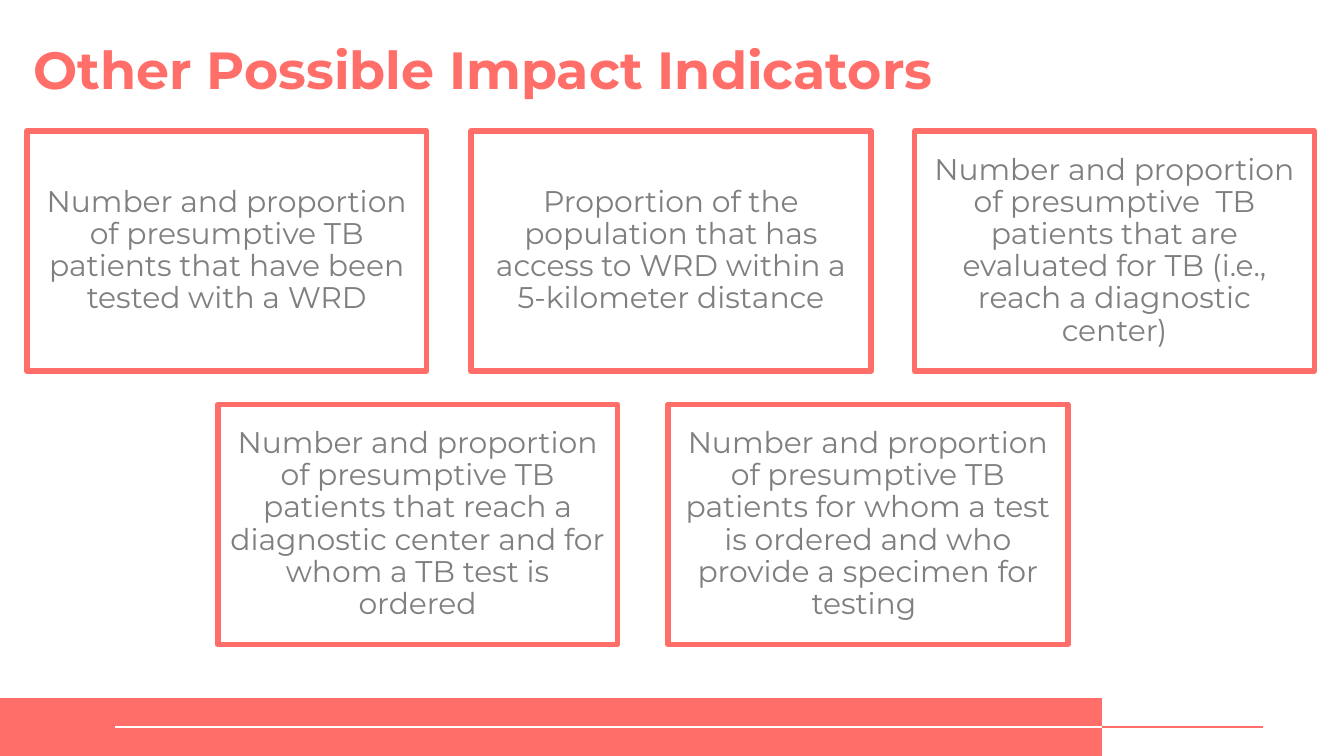
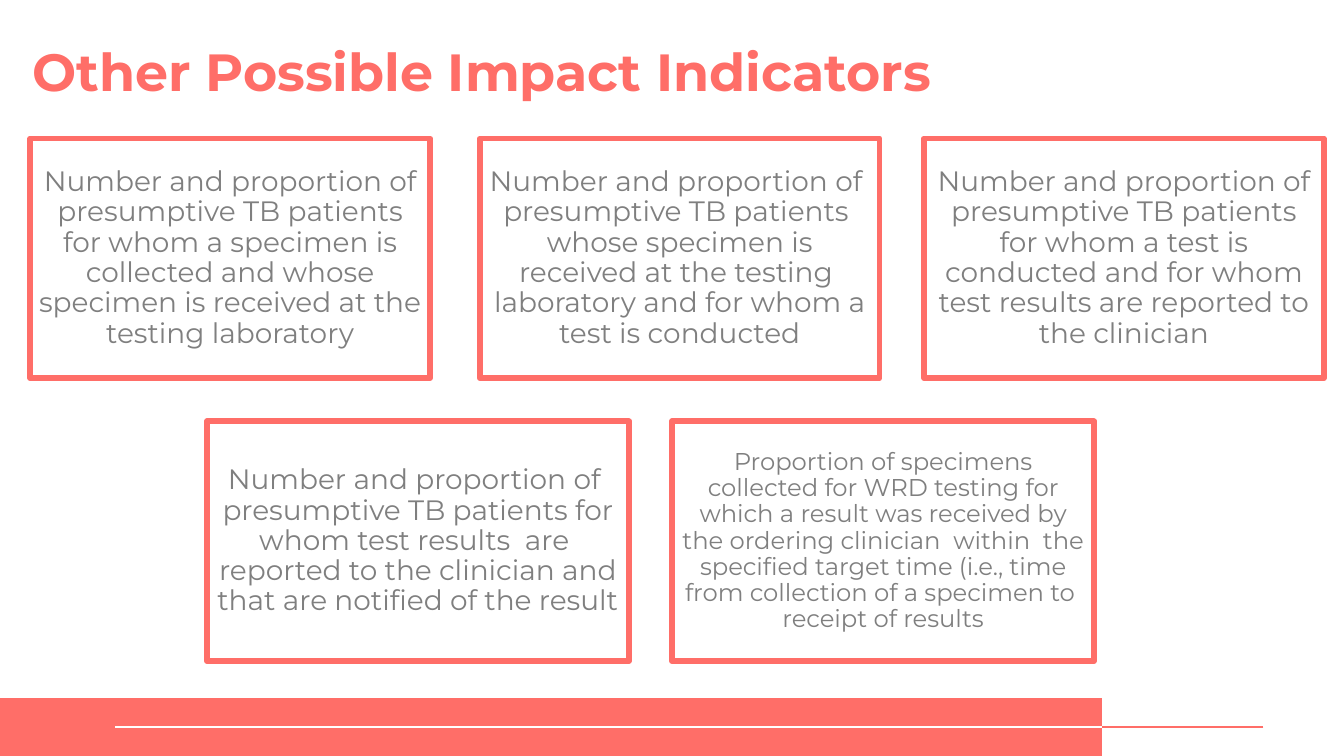
from lxml import etree
from pptx import Presentation
from pptx.dml.color import RGBColor
from pptx.enum.shapes import MSO_CONNECTOR, MSO_SHAPE
from pptx.enum.text import MSO_ANCHOR, MSO_AUTO_SIZE, PP_ALIGN
from pptx.oxml.ns import qn
from pptx.util import Pt

PX = 4572
CORAL = RGBColor(0xFF, 0x6E, 0x68)
GREY = RGBColor(0x7F, 0x7F, 0x7F)
WHITE = RGBColor(0xFF, 0xFF, 0xFF)
FONT = "Montserrat"
TITLE = "Other Possible Impact Indicators"
RECT = MSO_SHAPE.RECTANGLE
STRAIGHT = MSO_CONNECTOR.STRAIGHT
TOP, MIDDLE = MSO_ANCHOR.TOP, MSO_ANCHOR.MIDDLE
LEFT, CENTER = PP_ALIGN.LEFT, PP_ALIGN.CENTER
NO_FIT = MSO_AUTO_SIZE.NONE
TITLE_ONLY = 5
RIGHT_SIDE = 3
BOX_HEIGHT = 357
RULE_Y = 1082

SLIDES = [
    {
        "title_at": (30, 36, 1750, 110),
        "boxes": [
            (40, 195, 595, 16, "Number and proportion of presumptive TB patients that have been tested with a WRD"),
            (701, 195, 595, 16, "Proportion of the population that has access to WRD within a 5-kilometer distance"),
            (1361, 195, 595, 16, "Number and proportion of presumptive  TB patients that are evaluated for TB "
                                 "(i.e., reach a diagnostic center)"),
            (324, 602, 595, 16, "Number and proportion of presumptive TB patients that reach a diagnostic center "
                                "and for whom a TB test is ordered"),
            (994, 602, 595, 16, "Number and proportion of presumptive TB patients for whom a test is ordered "
                                "and who provide a specimen for testing "),
        ],
    },
    {
        "title_at": (28, 38, 1774, 126),
        "boxes": [
            (45, 206, 595, 15, "Number and proportion of presumptive TB patients for whom a specimen is "
                               "collected and whose specimen is received at the testing laboratory"),
            (714, 206, 595, 15, "Number and proportion of  presumptive TB patients  whose specimen is "
                                "received at the testing  laboratory and for whom a test is conducted"),
            (1375, 206, 595, 15, "Number and proportion of presumptive TB patients for whom a test is "
                                 "conducted and for whom test results are reported to the clinician"),
            (308, 627, 628, 15, "Number and proportion of  presumptive TB patients for whom test results  are  "
                                "reported to the clinician and that are notified of the result"),
            (1000, 627, 628, 13, "Proportion of specimens collected for WRD testing for which a result was "
                                 "received by the ordering clinician  within  the  specified target time "
                                 "(i.e., time  from collection of a specimen to  receipt of results"),
        ],
    },
]


def px(*values):
    return [v * PX for v in values]


def apply(obj, formats):
    for name, value in formats.items():
        setattr(obj, name, value)


class Deck:
    def __init__(self):
        self.prs = Presentation()
        self.prs.slide_width, self.prs.slide_height = px(2000, 1125)
        self.s = None

    def add_slide(self):
        self.s = self.prs.slides.add_slide(self.prs.slide_layouts[TITLE_ONLY])
        fill = self.s.background.fill
        fill.solid()
        fill.fore_color.rgb = WHITE

    def text(self, sp, text, size, color, inset, anchor, align, spacing, bold=False):
        tf = sp.text_frame
        margin = inset * PX
        apply(tf, {"word_wrap": True, "auto_size": NO_FIT, "vertical_anchor": anchor,
                   "margin_left": margin, "margin_top": margin,
                   "margin_right": margin, "margin_bottom": margin})
        p = tf.paragraphs[0]
        apply(p, {"alignment": align, "line_spacing": spacing})
        r = p.add_run()
        r.text = text
        apply(r.font, {"name": FONT, "size": Pt(size), "bold": bold})
        r.font.color.rgb = color

    def title(self, text, at):
        sp = self.s.shapes.title
        apply(sp, dict(zip(("left", "top", "width", "height"), px(*at))))
        self.text(sp, text, 28, CORAL, 20, TOP, LEFT, 1.0, bold=True)

    def rect(self, at, fill, line=None):
        sp = self.s.shapes.add_shape(RECT, *px(*at))
        sp.shadow.inherit = False
        sp.fill.solid()
        sp.fill.fore_color.rgb = fill
        if line is None:
            sp.line.fill.background()
        else:
            sp.line.color.rgb = line
            sp.line.width = Pt(3)
        return sp

    def box(self, x, y, width, size, text):
        sp = self.rect((x, y, width, BOX_HEIGHT), WHITE, CORAL)
        self.text(sp, text, size, GREY, 12, MIDDLE, CENTER, 0.9)

    def rule(self, start, end, color):
        c = self.s.shapes.add_connector(STRAIGHT, *px(start, RULE_Y, end, RULE_Y))
        c.line.color.rgb = color
        c.line.width = Pt(1.5)
        etree.SubElement(c._element.spPr, qn("a:effectLst"))
        return c

    def footer(self):
        band = self.rect((0, 1039, 1640, 86), CORAL)
        self.rule(1652, 171, WHITE)
        self.rule(1880, 1640, CORAL).end_connect(band, RIGHT_SIDE)


def main():
    deck = Deck()
    for content in SLIDES:
        deck.add_slide()
        deck.footer()
        deck.title(TITLE, content["title_at"])
        for box in content["boxes"]:
            deck.box(*box)
    deck.prs.save("out.pptx")


if __name__ == "__main__":
    main()
